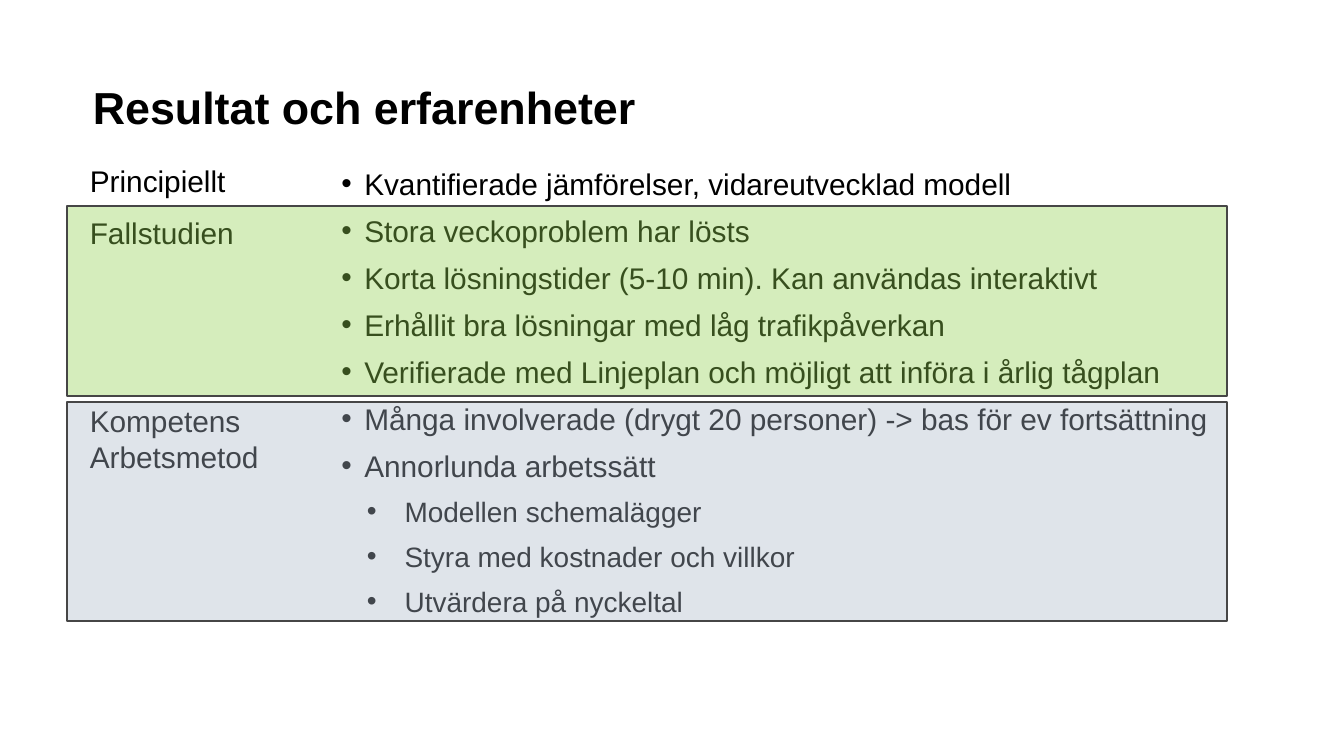
from dataclasses import dataclass

from lxml.etree import SubElement
from pptx import Presentation
from pptx.dml.color import RGBColor
from pptx.enum.shapes import MSO_SHAPE as Preset
from pptx.enum.text import MSO_ANCHOR as Anchor, MSO_AUTO_SIZE as AutoSize, PP_ALIGN as Align
from pptx.oxml.ns import qn
from pptx.util import Inches, Pt

FONT = "Arial"
BLACK = "000000"
OUTLINE = "464646"


@dataclass
class Label:
    text: str
    top: float
    width: float
    height: float


@dataclass
class Band:
    top: float
    height: float
    color: str


@dataclass
class Level:
    number: int
    size: int
    margin: float
    hanging: float


MAIN = Level(0, 16, 0.17, 0.17)
SUB = Level(1, 15, 0.47, 0.28)

BULLETS = [
    ("Kvantifierade jämförelser, vidareutvecklad modell", MAIN),
    ("Stora veckoproblem har lösts", MAIN),
    ("Korta lösningstider (5-10 min). Kan användas interaktivt", MAIN),
    ("Erhållit bra lösningar med låg trafikpåverkan", MAIN),
    ("Verifierade med Linjeplan och möjligt att införa i årlig tågplan", MAIN),
    ("Många involverade (drygt 20 personer) -> bas för ev fortsättning", MAIN),
    ("Annorlunda arbetssätt", MAIN),
    ("Modellen schemalägger", SUB),
    ("Styra med kostnader och villkor", SUB),
    ("Utvärdera på nyckeltal", SUB),
]
LABELS = [
    Label("Principiellt", 1.16, 1.22, 0.37),
    Label("Fallstudien", 1.55, 1.28, 0.37),
    Label("Kompetens\nArbetsmetod", 2.95, 1.47, 0.64),
]
BANDS = [Band(1.53, 1.42, "92D050"), Band(2.99, 1.63, "ADB9CA")]


def rgb(color: str) -> RGBColor:
    return RGBColor.from_string(color)


def place(shape, left: float, top: float, width: float, height: float) -> None:
    shape.left, shape.top = Inches(left), Inches(top)
    shape.width, shape.height = Inches(width), Inches(height)


def format_para(para, size: int, bold: bool = False) -> None:
    para.alignment = Align.LEFT
    para.space_before = Pt(0)
    for span in para.runs:
        span.font.name = FONT
        span.font.size = Pt(size)
        span.font.bold = bold
        span.font.color.rgb = rgb(BLACK)


def prepare_frame(frame) -> None:
    frame.vertical_anchor = Anchor.TOP
    frame.auto_size = AutoSize.NONE
    frame.word_wrap = True


def add_title(page, text: str) -> None:
    title = page.shapes.title
    place(title, 0.59, 0.59, 8.27, 0.39)
    frame = title.text_frame
    prepare_frame(frame)
    frame.text = text
    para = frame.paragraphs[0]
    para.line_spacing = 0.9
    format_para(para, 24, bold=True)


def add_bullets(page) -> None:
    body = page.placeholders[1]
    place(body, 2.44, 1.18, 6.95, 3.54)
    frame = body.text_frame
    prepare_frame(frame)
    frame.text = "\n".join(text for text, _ in BULLETS)
    for para, (_, level) in zip(frame.paragraphs, BULLETS):
        para.level = level.number
        format_para(para, level.size)
        para.space_after = Pt(6)
        properties = para._p.get_or_add_pPr()
        properties.set("marL", str(Inches(level.margin)))
        properties.set("indent", str(-Inches(level.hanging)))
        SubElement(properties, qn("a:buFont")).set("typeface", FONT)
        SubElement(properties, qn("a:buChar")).set("char", "•")


def add_label(page, label: Label) -> None:
    box = page.shapes.add_textbox(0, 0, 0, 0)
    place(box, 0.57, label.top, label.width, label.height)
    frame = box.text_frame
    frame.word_wrap = False
    frame.auto_size = AutoSize.SHAPE_TO_FIT_TEXT
    frame.text = label.text
    for para in frame.paragraphs:
        format_para(para, MAIN.size)


def add_band(page, band: Band) -> None:
    shape = page.shapes.add_shape(Preset.RECTANGLE, 0, 0, 0, 0)
    place(shape, 0.5, band.top, 8.63, band.height)
    shape.shadow.inherit = False
    shape.fill.solid()
    shape.fill.fore_color.rgb = rgb(band.color)
    tint = shape._element.spPr.find(qn("a:solidFill"))[0]
    SubElement(tint, qn("a:alpha")).set("val", "38000")
    shape.line.color.rgb = rgb(OUTLINE)
    shape.line.width = Pt(1)


def main() -> None:
    deck = Presentation()
    deck.slide_width = Inches(10)
    deck.slide_height = deck.slide_width * 9 // 16
    page = deck.slides.add_slide(deck.slide_layouts[0])
    add_title(page, "Resultat och erfarenheter")
    add_bullets(page)
    for label in LABELS:
        add_label(page, label)
    for band in BANDS:
        add_band(page, band)
    deck.save("out.pptx")


if __name__ == "__main__":
    main()
